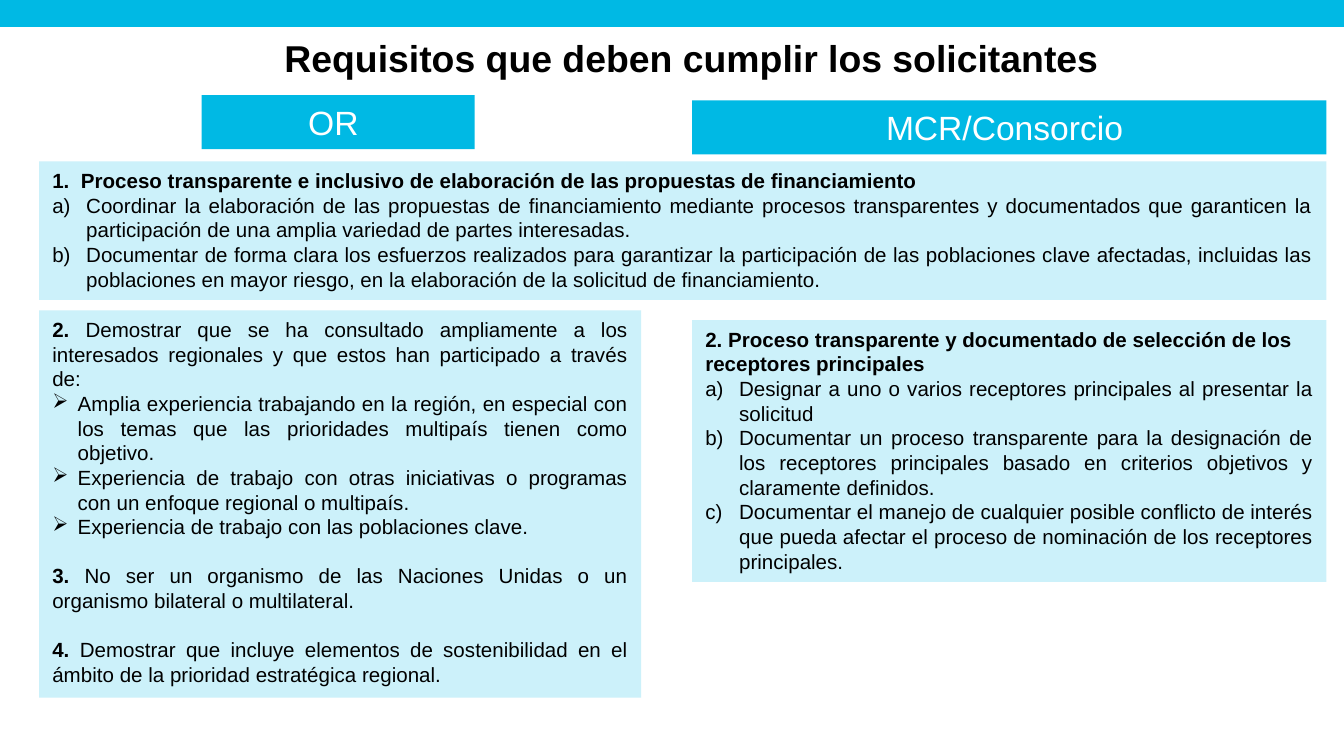
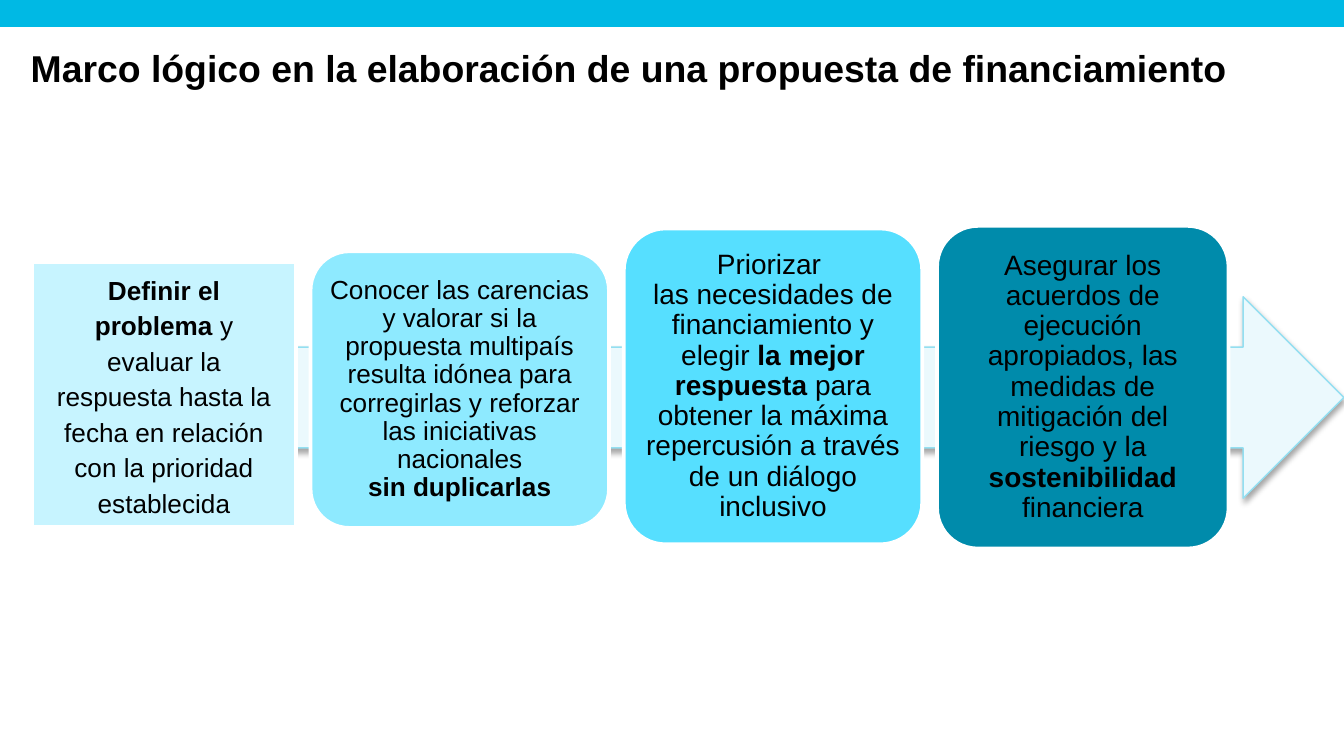
from dataclasses import dataclass

from lxml import etree
from pptx import Presentation
from pptx import util as u
from pptx.dml.color import RGBColor
from pptx.enum import shapes, text
from pptx.oxml import ns


@dataclass(frozen=True)
class Theme:
    font: str = "Arial"
    ink: str = "000000"
    paper: str = "FFFFFF"
    accent: str = "00B9E4"
    panel: str = "CCF1FA"
    arrow: str = "EBF9FD"
    arrow_edge: str = "93DFF1"
    title_size: int = 20
    heading_size: int = 18
    body_size: int = 11


THEME = Theme()
Align, Anchor, Preset = text.PP_ALIGN, text.MSO_ANCHOR, shapes.MSO_SHAPE
SLIDE_SIZE = (25.4, 14.29)
BAND = (0, 0, 25.4, 0.51)

# Boxes are left, top, width, height in cm; ** switches bold on and off.
REQUIREMENTS_TITLE = ("Requisitos que deben cumplir los solicitantes",
                      (0.91, 0.58, 24.33, 1), Align.CENTER)
HEADINGS = [
    ("MCR/Consorcio ", (13.08, 1.9, 11.99, 1.02)),
    ("OR ", (3.81, 1.8, 5.16, 1.02)),
]
PANELS = [
    ((0.74, 3.05, 24.33, 2.62), [
        ("heading", "**1.  Proceso transparente e inclusivo de elaboración de las "
                    "propuestas de financiamiento**"),
        ("letter", "Coordinar la elaboración de las propuestas de financiamiento mediante "
                   "procesos transparentes y documentados que garanticen la participación de "
                   "una amplia variedad de partes interesadas."),
        ("letter", "Documentar de forma clara los esfuerzos realizados para garantizar la "
                   "participación de las poblaciones clave afectadas, incluidas las "
                   "poblaciones en mayor riesgo, en la elaboración de la solicitud de "
                   "financiamiento."),
    ]),
    ((0.74, 5.87, 11.38, 7.32), [
        ("plain", "**2. **Demostrar que se ha consultado ampliamente a los interesados "
                  "regionales y que estos han participado a través de:"),
        ("arrow", "Amplia experiencia trabajando en la región, en especial con los temas "
                  "que las prioridades multipaís tienen como objetivo."),
        ("arrow", "Experiencia de trabajo con otras iniciativas o programas con un enfoque "
                  "regional o multipaís."),
        ("arrow", "Experiencia de trabajo con las poblaciones clave."),
        ("spaced", "**3.** No ser un organismo de las Naciones Unidas o un organismo "
                   "bilateral o multilateral."),
        ("spaced", "**4. **Demostrar que incluye elementos de sostenibilidad en el ámbito "
                   "de la prioridad estratégica regional."),
    ]),
    ((13.08, 6.05, 11.99, 4.95), [
        ("heading", "**2. Proceso transparente y documentado de selección de los "
                    "receptores principales**"),
        ("letter", "Designar a uno o varios receptores principales al presentar la solicitud"),
        ("letter", "Documentar un proceso transparente para la designación de los receptores "
                   "principales basado en criterios objetivos y claramente definidos."),
        ("letter", "Documentar el manejo de cualquier posible conflicto de interés que pueda "
                   "afectar el proceso de nominación de los receptores principales."),
    ]),
]

FRAMEWORK_TITLE = ("Marco lógico en la elaboración de una propuesta de financiamiento",
                   (0.33, 0.71, 24.79, 1.12), Align.LEFT)
PROCESS_ARROW = (1.17, 5.61, 24.23, 3.81)
STEPS_LEFT, STEPS_GAP = 0.61, 0.28
CORNER = 0.14
STEPS = [
    dict(top=4.95, width=4.98, height=5.01, fill="C7F4FF", size=14, inset=0.36,
         preset=Preset.RECTANGLE, spacing=u.Pt(19),
         words="**Definir el problema **y evaluar la respuesta hasta la fecha en relación "
               "con la prioridad establecida"),
    dict(top=4.75, width=5.64, height=5.23, fill="8EEAFF", size=14, inset=0.36,
         words="Conocer las carencias y valorar si la propuesta multipaís resulta idónea "
               "para corregirlas y reforzar las iniciativas nacionales\n**sin duplicarlas**"),
    dict(top=4.32, width=5.64, height=5.97, fill="56DFFF", size=15, inset=0.38,
         words="Priorizar \nlas necesidades de financiamiento y elegir **la mejor "
               "respuesta** para obtener la máxima repercusión a través de un diálogo "
               "inclusivo"),
    dict(top=4.27, width=5.51, height=6.1, fill="008BAB", size=15, inset=0.38,
         words="Asegurar los acuerdos de ejecución apropiados, las medidas de mitigación "
               "del riesgo y la **sostenibilidad** financiera"),
]

PARAGRAPH_STYLES = {
    "heading": dict(alignment=Align.LEFT),
    "plain": dict(alignment=Align.JUSTIFY),
    "letter": dict(alignment=Align.JUSTIFY),
    "arrow": dict(alignment=Align.JUSTIFY),
    "spaced": dict(alignment=Align.JUSTIFY, space_before=u.Pt(13)),
}
# Hanging indent in cm, bullet element, its attributes
BULLETS = {
    "letter": (0.64, "a:buAutoNum", {"type": "alphaLcParenR"}),
    "arrow": (0.48, "a:buChar", {"char": "➢"}),
}


def apply(target, values):
    for name, value in values.items():
        setattr(target, name, value)


def cm(box):
    return [u.Cm(length) for length in box]


def colour(code):
    return RGBColor.from_string(code)


def add_block(slide, box, fill, preset=Preset.RECTANGLE, edge=None, edge_width=0):
    block = slide.shapes.add_shape(preset, *cm(box))
    block.shadow.inherit = False
    block.fill.solid()
    block.fill.fore_color.rgb = colour(fill)
    if edge:
        block.line.color.rgb = colour(edge)
        block.line.width = u.Pt(edge_width)
    else:
        block.line.fill.background()
    return block


def add_bullet(paragraph, indent, tag, attributes):
    properties = paragraph._p.get_or_add_pPr()
    properties.set("marL", str(u.Cm(indent)))
    properties.set("indent", str(-u.Cm(indent)))
    etree.SubElement(properties, ns.qn(tag), attributes)


def write(paragraph, words, size, ink=THEME.ink, **format_values):
    """Fill a paragraph, turning ** into bold and newlines into line breaks."""
    apply(paragraph, format_values)
    for part, stretch in enumerate(words.split("**")):
        for number, line in enumerate(stretch.split("\n")):
            if number:
                paragraph.add_line_break()
            if line:
                run = paragraph.add_run()
                run.text = line
                apply(run.font, dict(name=THEME.font, size=u.Pt(size), bold=part % 2 == 1))
                run.font.color.rgb = colour(ink)


def start_slide(deck, title, box, alignment):
    slide = deck.slides.add_slide(deck.slide_layouts[6])
    add_block(slide, BAND, THEME.accent)
    frame = slide.shapes.add_textbox(*cm(box)).text_frame
    apply(frame, dict(word_wrap=True, vertical_anchor=Anchor.MIDDLE))
    write(frame.paragraphs[0], f"**{title}**", THEME.title_size, alignment=alignment)
    return slide


def add_heading(slide, words, box):
    frame = add_block(slide, box, THEME.accent).text_frame
    apply(frame, dict(word_wrap=True, vertical_anchor=Anchor.MIDDLE))
    write(frame.paragraphs[0], words, THEME.heading_size, THEME.paper,
          alignment=Align.CENTER)


def add_panel(slide, box, entries):
    frame = add_block(slide, box, THEME.panel).text_frame
    apply(frame, dict(word_wrap=True, vertical_anchor=Anchor.TOP,
                      auto_size=text.MSO_AUTO_SIZE.SHAPE_TO_FIT_TEXT))
    for number, (style, words) in enumerate(entries):
        paragraph = frame.add_paragraph() if number else frame.paragraphs[0]
        if style in BULLETS:
            add_bullet(paragraph, *BULLETS[style])
        write(paragraph, words, THEME.body_size, **PARAGRAPH_STYLES[style])


def add_process_arrow(slide):
    arrow = add_block(slide, PROCESS_ARROW, THEME.arrow, Preset.RIGHT_ARROW,
                      THEME.arrow_edge, 0.75)
    effects = arrow._element.spPr.find(ns.qn("a:effectLst"))
    shadow = etree.SubElement(effects, ns.qn("a:outerShdw"), {
        "blurRad": str(u.Pt(3.1)), "dist": str(u.Pt(1.8)),
        "dir": "5400000", "rotWithShape": "0"})
    black = etree.SubElement(shadow, ns.qn("a:srgbClr"), {"val": THEME.ink})
    etree.SubElement(black, ns.qn("a:alpha"), {"val": "35000"})


def add_step(slide, left, top, width, height, fill, size, inset, words,
             preset=Preset.ROUNDED_RECTANGLE, spacing=0.9):
    card = add_block(slide, (left, top, width, height), fill, preset, THEME.paper, 2)
    if preset == Preset.ROUNDED_RECTANGLE:
        card.adjustments[0] = CORNER
        # A rounded rectangle already holds its text clear of the corners.
        inset -= 0.29 * CORNER * min(width, height)
    frame = card.text_frame
    apply(frame, dict(word_wrap=True, vertical_anchor=Anchor.MIDDLE))
    apply(frame, {f"margin_{side}": u.Cm(inset)
                  for side in ("left", "top", "right", "bottom")})
    write(frame.paragraphs[0], words, size, alignment=Align.CENTER, line_spacing=spacing)


def main():
    deck = Presentation()
    deck.slide_width, deck.slide_height = cm(SLIDE_SIZE)

    requirements = start_slide(deck, *REQUIREMENTS_TITLE)
    for words, box in HEADINGS:
        add_heading(requirements, words, box)
    for box, entries in PANELS:
        add_panel(requirements, box, entries)

    framework = start_slide(deck, *FRAMEWORK_TITLE)
    add_process_arrow(framework)
    left = STEPS_LEFT
    for step in STEPS:
        add_step(framework, left, **step)
        left += step["width"] + STEPS_GAP

    deck.save("out.pptx")


if __name__ == "__main__":
    main()
